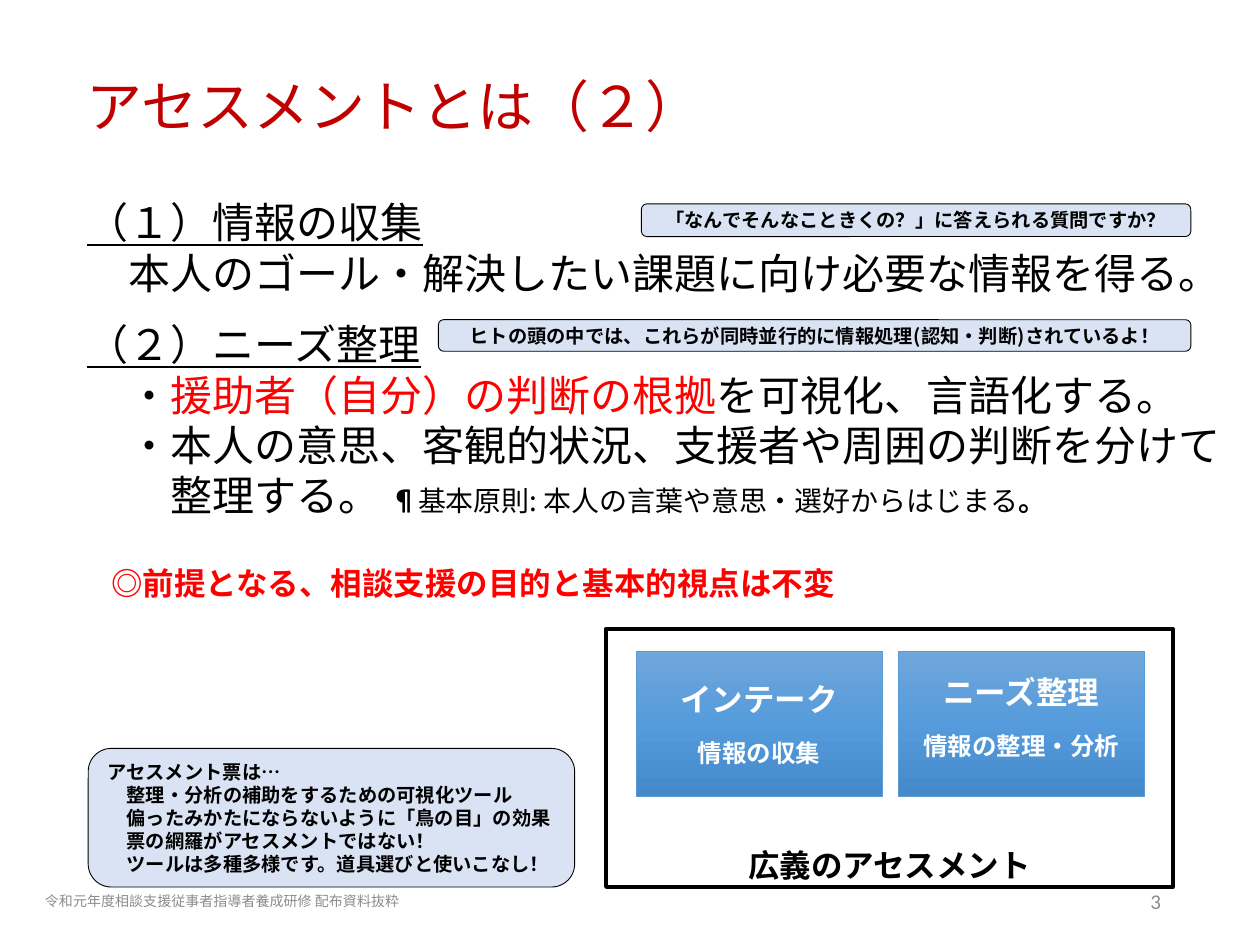
from copy import deepcopy

from pptx import Presentation
from pptx.dml import color as dml
from pptx.enum import shapes, text
from pptx.oxml import ns
from pptx.util import Pt

COLORS = {
    "black": "000000", "white": "FFFFFF", "title": "C00000", "red": "FF0000",
    "gray": "8C8C8C", "note": "DAE3F3", "edge": "5B9BD5",
    "top": "71A6DB", "middle": "559BDB", "bottom": "448ACA",
}
JAPANESE = "Noto Sans CJK JP"
LEFT, CENTER, RIGHT = text.PP_ALIGN.LEFT, text.PP_ALIGN.CENTER, text.PP_ALIGN.RIGHT
MIDDLE, TOP, BOTTOM = text.MSO_ANCHOR.MIDDLE, text.MSO_ANCHOR.TOP, text.MSO_ANCHOR.BOTTOM


def rgb(name):
    return dml.RGBColor.from_string(COLORS[name])


def write(shape, paragraphs, align=LEFT, anchor=MIDDLE, font=JAPANESE, bottom=3.6):
    frame = shape.text_frame
    frame.word_wrap = True
    frame.vertical_anchor = anchor
    frame.margin_bottom = Pt(bottom)
    for index, (indent, before, runs) in enumerate(paragraphs):
        paragraph = frame.add_paragraph() if index else frame.paragraphs[0]
        paragraph.alignment = align
        paragraph.space_before = Pt(before)
        paragraph.line_spacing = Pt(round(1.2 * max(run[1] for run in runs), 1))
        properties = paragraph._p.get_or_add_pPr()
        properties.set("marL", str(Pt(indent)))
        properties.set("indent", "0")
        for words, size, color, style in runs:
            run = paragraph.add_run()
            run.text = words
            run.font.size = Pt(size)
            run.font.name = font
            run.font.bold = "b" in style
            run.font.underline = "u" in style
            run.font.color.rgb = rgb(color)
            east_asian = run._r.get_or_add_rPr().makeelement(ns.qn("a:ea"), {"typeface": font})
            run.font._element.find(ns.qn("a:latin")).addnext(east_asian)


presentation = Presentation()
presentation.slide_width = Pt(720)
presentation.slide_height = Pt(540)
slide = presentation.slides.add_slide(presentation.slide_layouts[6])

title = slide.shapes.add_textbox(Pt(42.5), Pt(8), Pt(620.5), Pt(104.5))
write(title, [(0, 0, [("アセスメントとは（２）", 32, "title", "")])])

number = slide.shapes.add_textbox(Pt(508.5), Pt(500.5), Pt(162), Pt(28.5))
write(number, [(0, 0, [("3", 12, "gray", "")])], align=RIGHT, font="Calibri")

body = slide.shapes.add_textbox(Pt(42.5), Pt(109), Pt(675.5), Pt(259))
write(body, [
    (0, 0, [("（１）情報の収集", 24, "black", "u")]),
    (24, 0, [("本人のゴール・解決したい課題に向け必要な情報を得る。", 24, "black", "")]),
    (0, 12, [("（２）ニーズ整理", 24, "black", "u")]),
    (24, 0, [("・", 24, "black", ""),
             ("援助者（自分）の判断の根拠", 24, "red", ""),
             ("を可視化、言語化する。", 24, "black", "")]),
    (24, 0, [("・本人の意思、客観的状況、支援者や周囲の判断を分けて", 24, "black", "")]),
    (48, 0, [("整理する。 ", 24, "black", ""),
             ("¶", 16, "black", "b"),
             ("基本原則: 本人の言葉や意思・選好からはじまる", 16, "black", ""),
             ("。", 16, "black", "b")]),
    (14, 25, [("◎前提となる、相談支援の目的と基本的視点は不変", 18, "red", "b")]),
], anchor=TOP)

notes = [
    (366.5, 116.5, 314, 18.7, CENTER, [(0, "「なんでそんなこときくの？」に答えられる質問ですか？")]),
    (250.5, 182.7, 430, 18, CENTER,
     [(0, "ヒトの頭の中では、これらが同時並行的に情報処理(認知・判断)されているよ！")]),
    (50.4, 427.7, 278, 79.2, LEFT, [
        (0, "アセスメント票は…"),
        (11, "整理・分析の補助をするための可視化ツール"),
        (11, "偏ったみかたにならないように「鳥の目」の効果"),
        (11, "票の網羅がアセスメントではない！"),
        (11, "ツールは多種多様です。道具選びと使いこなし！"),
    ]),
]
for left, top, width, height, align, lines in notes:
    note = slide.shapes.add_shape(
        shapes.MSO_SHAPE.ROUNDED_RECTANGLE, Pt(left), Pt(top), Pt(width), Pt(height))
    note.shadow.inherit = False
    note.fill.solid()
    note.fill.fore_color.rgb = rgb("note")
    note.line.color.rgb = rgb("black")
    note.line.width = Pt(0.5)
    write(note, [(indent, 0, [(line, 11, "black", "b")]) for indent, line in lines], align=align)

assessment = slide.shapes.add_shape(
    shapes.MSO_SHAPE.RECTANGLE, Pt(346.3), Pt(359.3), Pt(324), Pt(147.6))
assessment.shadow.inherit = False
assessment.fill.background()
assessment.line.color.rgb = rgb("black")
assessment.line.width = Pt(2)
write(assessment, [(0, 0, [("広義のアセスメント", 18, "black", "b")])],
      align=CENTER, anchor=BOTTOM, bottom=1.6)

steps = [
    (363.6, "インテーク", "情報の収集", 3.6),
    (513.4, "ニーズ整理", "情報の整理・分析", 11.6),
]
for left, heading, detail, bottom in steps:
    step = slide.shapes.add_shape(
        shapes.MSO_SHAPE.RECTANGLE, Pt(left), Pt(372.2), Pt(140.4), Pt(82.8))
    step.shadow.inherit = False
    step.fill.gradient()
    step.fill.gradient_angle = 270
    first_stop = step._element.spPr.find(".//" + ns.qn("a:gs"))
    first_stop.addnext(deepcopy(first_stop))
    for stop, position, color in zip(
            step.fill.gradient_stops, (0, 0.5, 1), ("top", "middle", "bottom")):
        stop.position = position
        stop.color.rgb = rgb(color)
    step.line.color.rgb = rgb("edge")
    step.line.width = Pt(0.5)
    write(step, [(0, 0, [(heading, 18, "white", "b")]),
                 (0, 12, [(detail, 14, "white", "b")])], align=CENTER, bottom=bottom)

footer = slide.shapes.add_textbox(Pt(14.4), Pt(507), Pt(225.4), Pt(15.8))
write(footer, [(0, 0, [("令和元年度相談支援従事者指導者養成研修 配布資料抜粋", 8, "gray", "")])],
      align=CENTER)

presentation.save("out.pptx")
